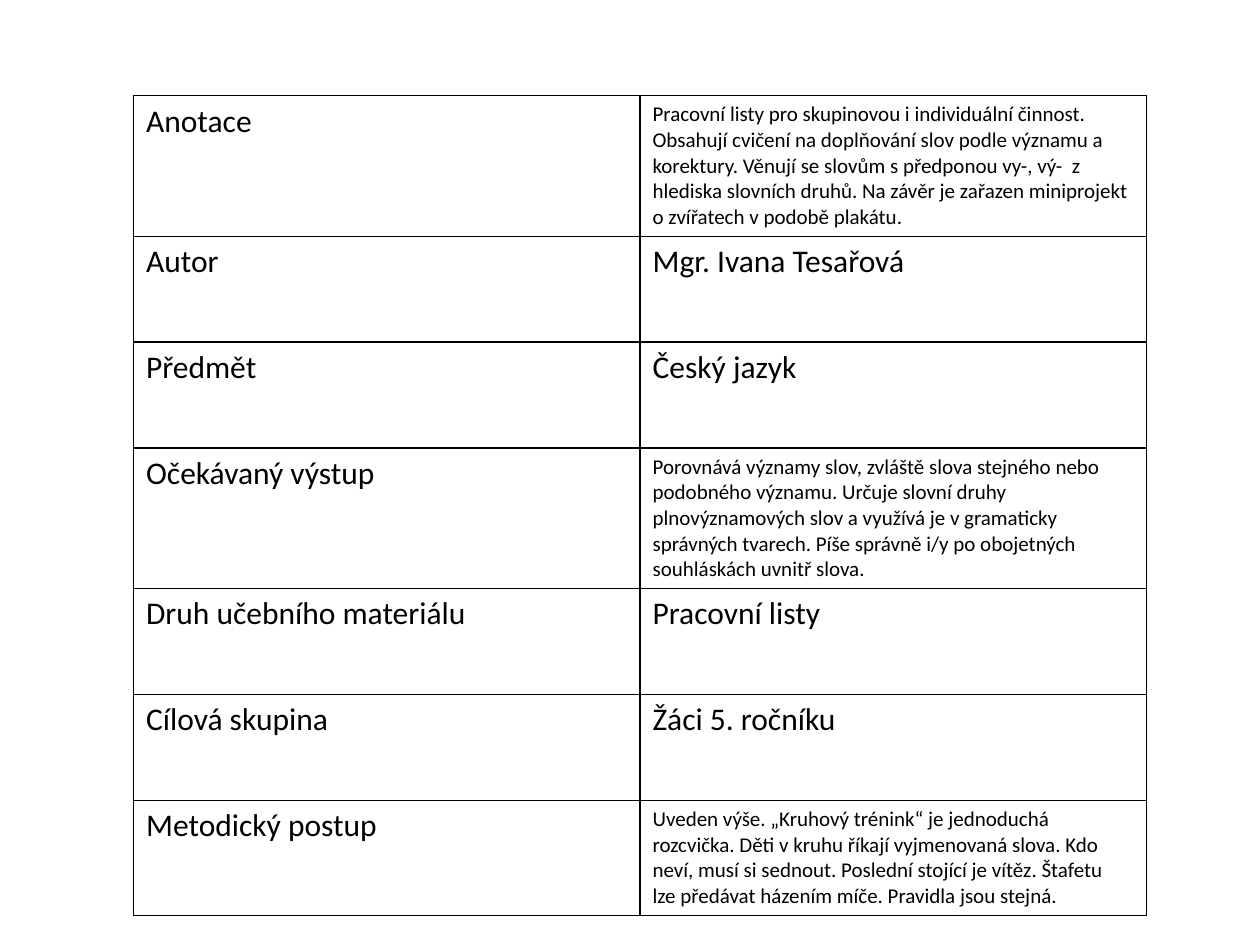
from dataclasses import dataclass

from lxml import etree
from pptx import Presentation
from pptx.dml.color import RGBColor
from pptx.oxml.ns import qn
from pptx.util import Inches, Pt

BLANK_LAYOUT = 6
BORDER_TAGS = ("a:lnL", "a:lnR", "a:lnT", "a:lnB")


@dataclass(frozen=True)
class Theme:
    font: str = "Calibri"
    ink: str = "000000"
    label_size: int = 18
    detail_size: int = 12
    border_width: int = 1


THEME = Theme()

# Each row: label, size of the value, paragraphs of the value
WORKSHEET_FACTS = [
    ("Anotace", THEME.detail_size, [
        "Pracovní listy pro skupinovou i individuální činnost.",
        "Obsahují cvičení na doplňování slov podle významu a korektury. "
        "Věnují se slovům s předponou vy-, vý-  z hlediska slovních druhů. "
        "Na závěr je zařazen miniprojekt o zvířatech v podobě plakátu."]),
    ("Autor", THEME.label_size, ["Mgr. Ivana Tesařová"]),
    ("Předmět", THEME.label_size, ["Český jazyk"]),
    ("Očekávaný výstup", THEME.detail_size, [
        "Porovnává významy slov, zvláště slova stejného nebo podobného "
        "významu. Určuje slovní druhy plnovýznamových slov a využívá je "
        "v gramaticky správných tvarech. Píše správně i/y po obojetných "
        "souhláskách uvnitř slova."]),
    ("Druh učebního materiálu", THEME.label_size, ["Pracovní listy"]),
    ("Cílová skupina", THEME.label_size, ["Žáci 5. ročníku"]),
    ("Metodický postup", THEME.detail_size, [
        "Uveden výše. „Kruhový trénink“ je jednoduchá rozcvička. Děti v kruhu "
        "říkají vyjmenovaná slova. Kdo neví, musí si sednout. Poslední "
        "stojící je vítěz. Štafetu  lze předávat házením míče. Pravidla "
        "jsou stejná."]),
]


class SlideBuilder:
    """Holds the theme and the current slide."""

    def __init__(self, slide, theme):
        self.slide = slide
        self.theme = theme

    def fill_text(self, cell, paragraphs, size):
        frame = cell.text_frame
        for index, text in enumerate(paragraphs):
            paragraph = frame.add_paragraph() if index else frame.paragraphs[0]
            run = paragraph.add_run()
            run.text = text
            run.font.name = self.theme.font
            run.font.size = Pt(size)
            run.font.color.rgb = RGBColor.from_string(self.theme.ink)

    def outline(self, cell):
        cell.fill.background()
        properties = cell._tc.get_or_add_tcPr()
        # Border lines come before the fill in the cell properties
        for position, tag in enumerate(BORDER_TAGS):
            line = etree.Element(qn(tag), w=str(Pt(self.theme.border_width)))
            solid = etree.SubElement(line, qn("a:solidFill"))
            etree.SubElement(solid, qn("a:srgbClr"), val=self.theme.ink)
            properties.insert(position, line)

    def fact_table(self, facts, left, top, column_width, row_height):
        table = self.slide.shapes.add_table(
            len(facts), 2, Inches(left), Inches(top),
            Inches(2 * column_width), Inches(row_height * len(facts))).table
        table.first_row = table.horz_banding = False
        for row, (label, value_size, value) in enumerate(facts):
            self.fill_text(table.cell(row, 0), [label], self.theme.label_size)
            self.fill_text(table.cell(row, 1), value, value_size)
        for cell in table.iter_cells():
            self.outline(cell)


def main():
    deck = Presentation()
    deck.slide_width, deck.slide_height = Inches(10), Inches(7.5)
    slide = deck.slides.add_slide(deck.slide_layouts[BLANK_LAYOUT])

    # Overview of the worksheet
    builder = SlideBuilder(slide, THEME)
    builder.fact_table(WORKSHEET_FACTS, left=1.06, top=0.76,
                       column_width=4.02, row_height=0.84)
    deck.save("out.pptx")


if __name__ == "__main__":
    main()
